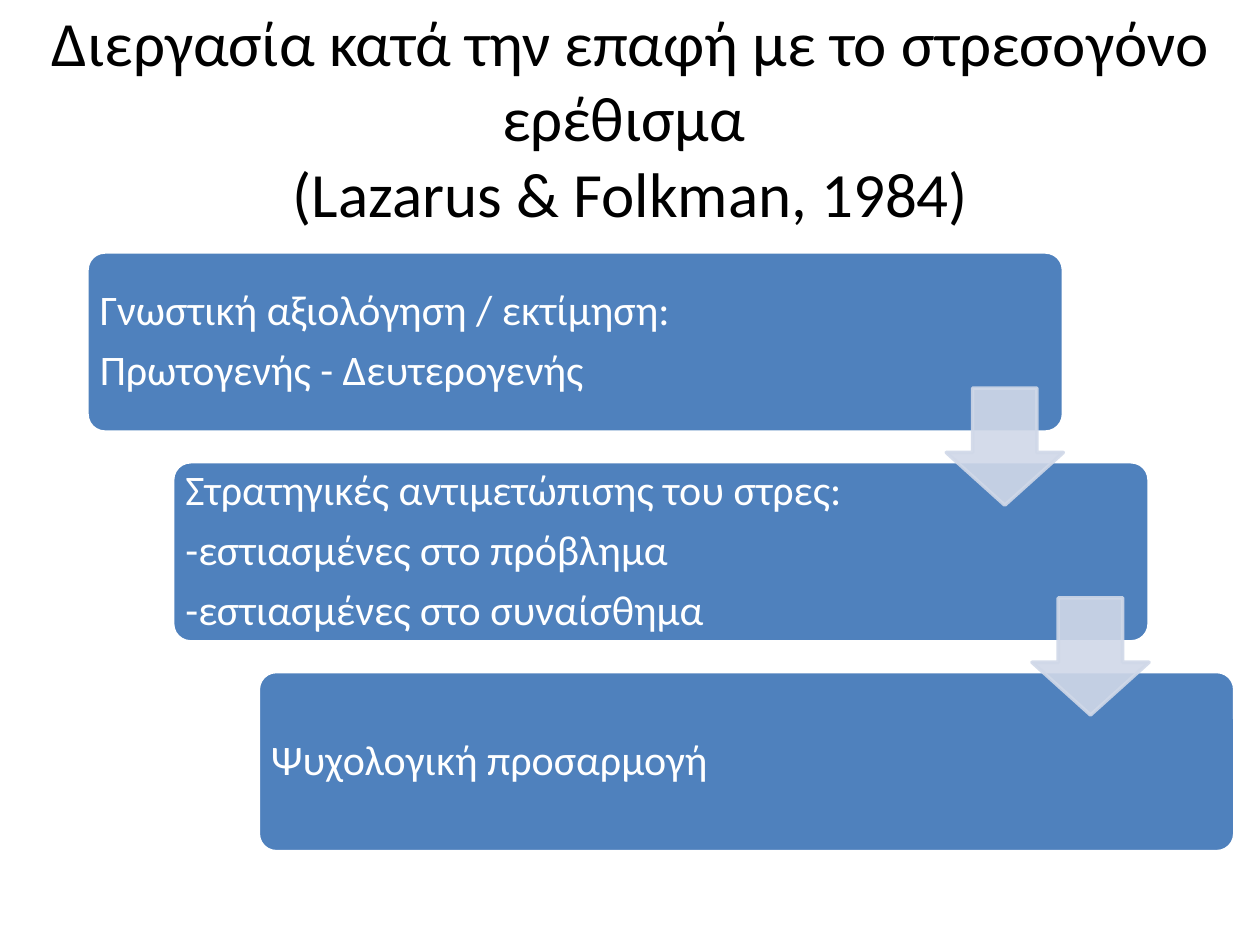
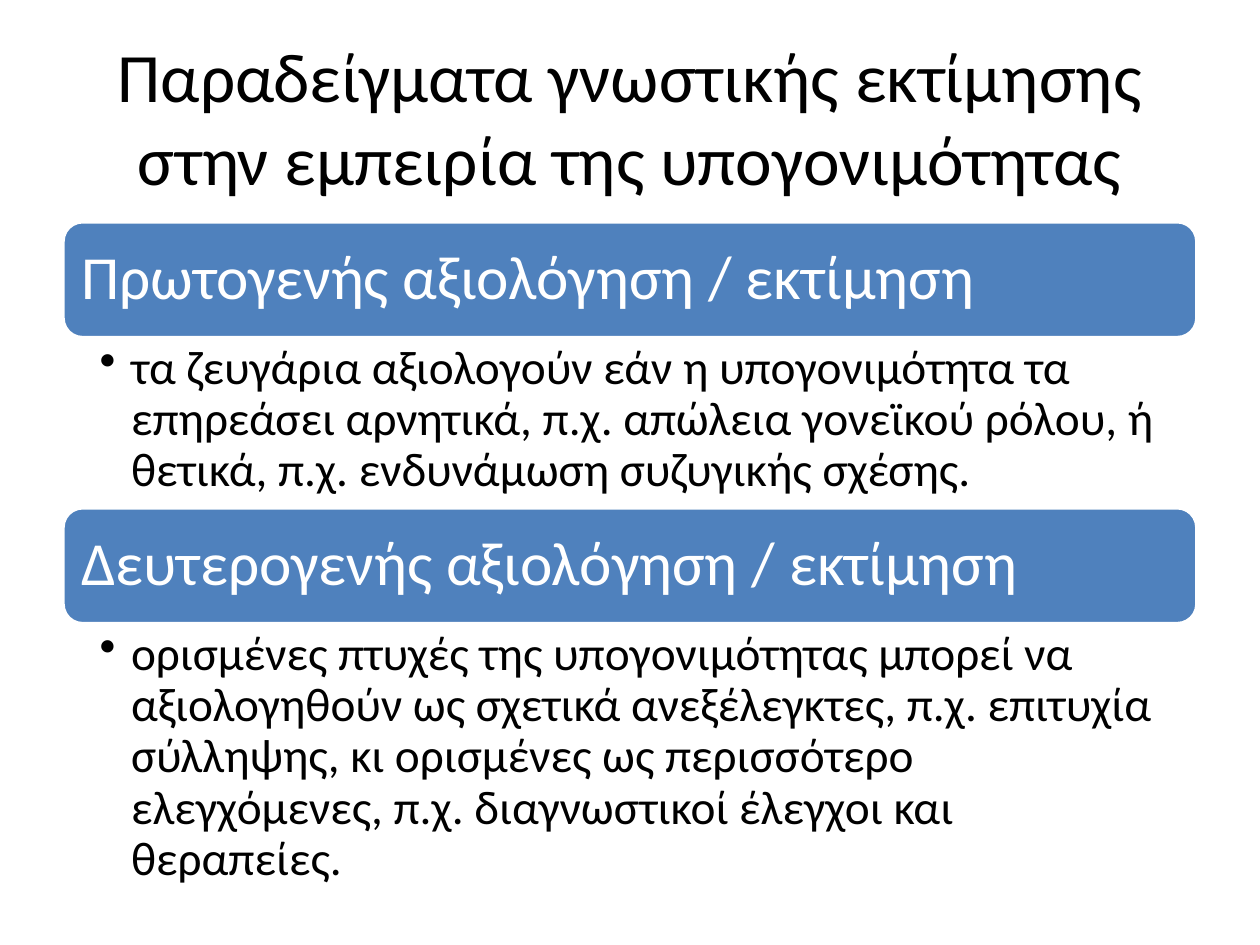
"""Build two slides on cognitive appraisal of stress: a stepped process and a list of examples."""
from dataclasses import dataclass

import pptx
import pptx.dml.color
import pptx.enum.shapes
import pptx.enum.text
import pptx.oxml
import pptx.oxml.ns
import pptx.util

Inches = pptx.util.Inches
SHAPES = pptx.enum.shapes.MSO_SHAPE
ANCHOR = pptx.enum.text.MSO_ANCHOR
ALIGN = pptx.enum.text.PP_ALIGN


@dataclass(frozen=True)
class Theme:
    font: str = "Calibri"
    text: str = "000000"
    white: str = "FFFFFF"
    box: str = "4F81BD"
    arrow: str = "D0D8E8"
    arrow_opacity: int = 90
    outline: float = 2
    line_spacing: float = 0.9
    long_title_size: float = 36
    title_size: float = 39.6
    step_size: float = 24
    heading_size: float = 35
    bullet_size: float = 27


class Deck:
    def __init__(self, theme):
        self.theme = theme
        self.presentation = pptx.Presentation()
        self.presentation.slide_width = Inches(10)
        self.presentation.slide_height = Inches(7.5)
        self.slide = None

    def new_slide(self):
        self.slide = self.presentation.slides.add_slide(self.presentation.slide_layouts[6])

    def prepare_frame(self, shape, anchor, left, top, right):
        frame = shape.text_frame
        frame.word_wrap = True
        frame.vertical_anchor = anchor
        frame.margin_left, frame.margin_right = Inches(left), Inches(right)
        frame.margin_top = frame.margin_bottom = Inches(top)
        return frame

    def add_run(self, paragraph, text, size, color):
        run = paragraph.add_run()
        run.text = text
        run.font.name = self.theme.font
        run.font.size = pptx.util.Pt(size)
        run.font.color.rgb = pptx.dml.color.RGBColor.from_string(color)

    def space(self, paragraph, size, share_after):
        paragraph.line_spacing = self.theme.line_spacing
        paragraph.space_after = pptx.util.Pt(round(size * share_after, 1))

    def title(self, lines, left, width, size):
        shape = self.slide.shapes.add_textbox(
            Inches(left), Inches(0.3), Inches(width), Inches(1.25))
        frame = self.prepare_frame(shape, ANCHOR.MIDDLE, 0.1, 0.05, 0.1)
        paragraph = frame.paragraphs[0]
        paragraph.alignment = ALIGN.CENTER
        for index, line in enumerate(lines):
            if index:
                paragraph.add_line_break()
            self.add_run(paragraph, line, size, self.theme.text)

    def block(self, kind, left, top, width, height, adjustments, color, outline, opacity=100):
        shape = self.slide.shapes.add_shape(
            kind, Inches(left), Inches(top), Inches(width), Inches(height))
        shape.shadow.inherit = False
        for index, value in enumerate(adjustments):
            shape.adjustments[index] = value
        shape.line.width = pptx.util.Pt(self.theme.outline)
        shape.fill.solid()
        shape.line.fill.solid()
        for fill, value in ((shape.fill, color), (shape.line.fill, outline)):
            fill.fore_color.rgb = pptx.dml.color.RGBColor.from_string(value)
        if opacity < 100:
            for node in shape.fill._xPr.iter(pptx.oxml.ns.qn("a:srgbClr")):
                alpha = pptx.oxml.parse_xml(
                    f'<a:alpha {pptx.oxml.ns.nsdecls("a")} val="{opacity * 1000}"/>')
                node.append(alpha)
        return shape

    def box(self, lines, left, top, width, height, corner, margin, size):
        theme = self.theme
        shape = self.block(SHAPES.ROUNDED_RECTANGLE, left, top, width, height,
                           [corner], theme.box, theme.white)
        frame = self.prepare_frame(shape, ANCHOR.MIDDLE, margin, margin, margin)
        for index, line in enumerate(lines):
            paragraph = frame.add_paragraph() if index else frame.paragraphs[0]
            paragraph.alignment = ALIGN.LEFT
            self.space(paragraph, size, 0.35)
            self.add_run(paragraph, line, size, theme.white)

    def down_arrow(self, left, top, side):
        theme = self.theme
        self.block(SHAPES.DOWN_ARROW, left, top, side, side, [0.45, 0.55],
                   theme.arrow, theme.arrow, theme.arrow_opacity).adjustments[0] = 0.55
        self.slide.shapes[-1].adjustments[1] = 0.45

    def bullet(self, text, left, top, width, height):
        shape = self.slide.shapes.add_textbox(
            Inches(left), Inches(top), Inches(width), Inches(height))
        frame = self.prepare_frame(shape, ANCHOR.TOP, 0.29, 0.05, 0.27)
        paragraph = frame.paragraphs[0]
        paragraph.level = 1
        size = self.theme.bullet_size
        self.space(paragraph, size, 0.2)
        properties = paragraph._p.get_or_add_pPr()
        properties.set("marL", str(Inches(0.25)))
        properties.set("indent", str(-Inches(0.25)))
        properties.append(pptx.oxml.parse_xml(
            f'<a:buChar {pptx.oxml.ns.nsdecls("a")} char="•"/>'))
        self.add_run(paragraph, text, size, self.theme.text)


def build_process(deck):
    steps = [
        ["Γνωστική αξιολόγηση / εκτίμηση:", "Πρωτογενής - Δευτερογενής"],
        ["Στρατηγικές αντιμετώπισης του στρες:", "-εστιασμένες στο πρόβλημα",
         "-εστιασμένες στο συναίσθημα"],
        ["Ψυχολογική προσαρμογή"],
    ]
    deck.new_slide()
    deck.title(["Διεργασία κατά την επαφή με το στρεσογόνο ερέθισμα ",
                "(Lazarus & Folkman, 1984)"], 0.2, 9.61, deck.theme.long_title_size)
    width, height, arrow_side = 7.75, 1.43, 0.93
    corners = [(0.69 + 0.68 * index, 2 + 1.665 * index) for index in range(len(steps))]
    for lines, (left, top) in zip(steps, corners):
        deck.box(lines, left, top, width, height, 0.1, 0.06, deck.theme.step_size)
    for left, top in corners[:-1]:
        deck.down_arrow(left + width - arrow_side, top + 1.08, arrow_side)


def build_examples(deck):
    sections = [
        ("Πρωτογενής αξιολόγηση / εκτίμηση",
         "τα ζευγάρια αξιολογούν εάν η υπογονιμότητα τα επηρεάσει αρνητικά, "
         "π.χ. απώλεια γονεϊκού ρόλου, ή θετικά, π.χ. ενδυνάμωση συζυγικής σχέσης.", 1.35),
        ("Δευτερογενής αξιολόγηση / εκτίμηση",
         "ορισμένες πτυχές της υπογονιμότητας μπορεί να αξιολογηθούν ως σχετικά "
         "ανεξέλεγκτες, π.χ. επιτυχία σύλληψης, κι ορισμένες ως περισσότερο "
         "ελεγχόμενες, π.χ. διαγνωστικοί έλεγχοι και θεραπείες.", 2.18),
    ]
    deck.new_slide()
    left, width, heading_height = 0.5, 9, 0.92
    deck.title(["Παραδείγματα γνωστικής εκτίμησης στην εμπειρία της υπογονιμότητας"],
               left, width, deck.theme.title_size)
    top = 1.76
    for heading, text, text_height in sections:
        deck.box([heading], left, top, width, heading_height, 0.17, 0.1,
                 deck.theme.heading_size)
        top += heading_height
        deck.bullet(text, left, top, width, text_height)
        top += text_height


def main():
    deck = Deck(Theme())
    build_process(deck)
    build_examples(deck)
    deck.presentation.save("out.pptx")


if __name__ == "__main__":
    main()
